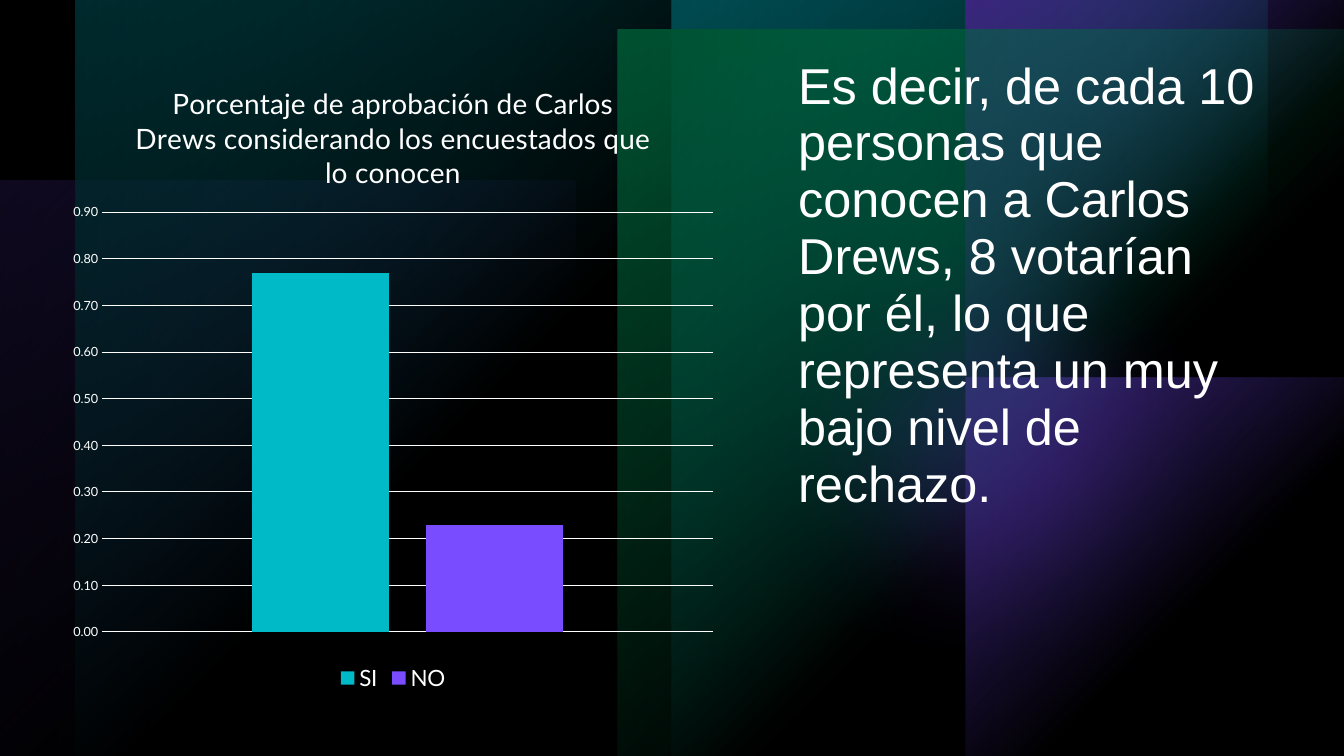
import dataclasses

import pptx
import pptx.chart.data
import pptx.dml.color
import pptx.enum.chart
import pptx.enum.shapes
import pptx.enum.text
import pptx.oxml
import pptx.oxml.ns
import pptx.util
from pptx.util import Cm, Pt


@dataclasses.dataclass(frozen=True)
class Theme:
    black: str = "000000"
    white: str = "FFFFFF"
    purple: str = "794DFF"
    teal: str = "00BAC8"
    green: str = "00D17D"
    text_font: str = "Arial"
    chart_font: str = "Lato"
    statement: int = 36
    chart_title: int = 20
    legend: int = 16
    axis: int = 9


theme = Theme()
rgb = pptx.dml.color.RGBColor.from_string
qn = pptx.oxml.ns.qn
RADIAL = ('<a:path path="circle"><a:fillToRect r="100000" b="100000"/></a:path>'
          '<a:tileRect l="-100000" t="-100000"/>')
LINEAR = '<a:lin ang="0" scaled="0"/>'


def gradient(stops, direction):
    """Gradient fill XML from (position %, colour, opacity %) stops."""
    marks = "".join(
        f'<a:gs pos="{pos * 1000}"><a:srgbClr val="{color}">'
        f'<a:alpha val="{opacity * 1000}"/></a:srgbClr></a:gs>'
        for pos, color, opacity in stops)
    return (f'<a:gradFill {pptx.oxml.ns.nsdecls("a")} rotWithShape="1">'
            f'<a:gsLst>{marks}</a:gsLst>{direction}</a:gradFill>')


def add_layer(page, kind, bounds, fill_xml, rotation=0, flip=False):
    layer = page.shapes.add_shape(kind, *(Cm(value) for value in bounds))
    layer.shadow.inherit = False
    layer.line.fill.background()
    layer.rotation = rotation
    layer.fill.background()
    properties = layer.element.spPr
    properties.replace(properties.find(qn("a:noFill")), pptx.oxml.parse_xml(fill_xml))
    if flip:
        properties.find(qn("a:xfrm")).set("flipH", "1")
    return layer


deck = pptx.Presentation()
deck.slide_width, deck.slide_height = Cm(33.87), Cm(19.05)
page = deck.slides.add_slide(deck.slide_layouts[5])
page.background.fill.solid()
page.background.fill.fore_color.rgb = rgb(theme.black)

# Coloured light behind the content
RECT = pptx.enum.shapes.MSO_SHAPE.RECTANGLE
OVAL = pptx.enum.shapes.MSO_SHAPE.OVAL
corner_glow = gradient([(0, theme.purple, 60), (60, theme.purple, 0)], RADIAL)
add_layer(page, RECT, (0, 4.55, 14.5, 14.5), corner_glow, 270)

for bounds, color, opacity in [
    ((17.73, 0, 11.99, 11.99), theme.green, 96),
    ((16.99, 3.43, 15.29, 15.29), theme.purple, 60),
]:
    fill_xml = (f'<a:solidFill {pptx.oxml.ns.nsdecls("a")}><a:srgbClr val="{color}">'
                f'<a:alpha val="{opacity * 1000}"/></a:srgbClr></a:solidFill>')
    halo = add_layer(page, OVAL, bounds, fill_xml)
    effects = halo.element.spPr.find(qn("a:effectLst"))
    effects.append(pptx.oxml.parse_xml(
        f'<a:softEdge {pptx.oxml.ns.nsdecls("a")} rad="{Pt(100)}"/>'))

for bounds, color, rotation, flip in [
    ((16.92, 0, 15.01, 19.05), theme.teal, 0, False),
    ((1.91, 0, 15.01, 19.05), theme.teal, 0, True),
    ((24.34, 9.52, 9.53, 9.53), theme.purple, 90, False),
    ((24.34, 0, 9.53, 9.53), theme.purple, 90, True),
    ((15.56, 0.74, 18.31, 18.31), theme.green, 180, False),
]:
    glow = gradient([(0, color, 100), (60, color, 0)], RADIAL)
    add_layer(page, RECT, bounds, glow, rotation, flip)

shade = gradient([(0, theme.black, 40), (100, theme.black, 80)], LINEAR)
veil = add_layer(page, RECT, (0, 0, 33.87, 19.05), shade, flip=True)

# Statement
title = page.shapes.title
veil.element.addnext(title.element)
title.left, title.top, title.width, title.height = Cm(19.86), Cm(1.35), Cm(12.5), Cm(11.84)
frame = title.text_frame
frame.text = ("Es decir, de cada 10 personas que conocen a Carlos Drews, 8 votarían "
              "por él, lo que representa un muy bajo nivel de rechazo.")
frame.word_wrap = True
frame.auto_size = pptx.enum.text.MSO_AUTO_SIZE.NONE
frame.vertical_anchor = pptx.enum.text.MSO_ANCHOR.TOP
para = frame.paragraphs[0]
para.alignment = pptx.enum.text.PP_ALIGN.LEFT
para.line_spacing = 0.94
para.font.name = theme.text_font
para.font.size = Pt(theme.statement)
para.font.color.rgb = rgb(theme.white)

# Approval chart
approval = pptx.chart.data.CategoryChartData(number_format="0.00")
approval.categories = ["1"]
approval.add_series("SI", [0.77])
approval.add_series("NO", [0.23])
chart = page.shapes.add_chart(
    pptx.enum.chart.XL_CHART_TYPE.COLUMN_CLUSTERED,
    Cm(1.5), Cm(1.5), Cm(16.81), Cm(16.03), approval).chart
chart.font.name = theme.chart_font
chart.font.size = Pt(10)
chart.font.color.rgb = rgb(theme.white)

chart.has_title = True
heading = chart.chart_title.text_frame
heading.text = ("Porcentaje de aprobación de Carlos Drews considerando "
                "los encuestados que lo conocen")
heading_font = heading.paragraphs[0].font
heading_font.name = theme.chart_font
heading_font.size = Pt(theme.chart_title)
heading_font.bold = False
heading_font.color.rgb = rgb(theme.white)
chart.chart_title.include_in_layout = False

chart.has_legend = True
chart.legend.position = pptx.enum.chart.XL_LEGEND_POSITION.BOTTOM
chart.legend.include_in_layout = False
chart.legend.font.name = theme.chart_font
chart.legend.font.size = Pt(theme.legend)
chart.legend.font.color.rgb = rgb(theme.white)

chart.category_axis.visible = False
axis = chart.value_axis
axis.minimum_scale, axis.maximum_scale, axis.major_unit = 0, 0.9, 0.1
axis.major_tick_mark = pptx.enum.chart.XL_TICK_MARK.NONE
axis.format.line.fill.background()
axis.major_gridlines.format.line.color.rgb = rgb(theme.white)
axis.major_gridlines.format.line.width = Pt(0.75)
axis.tick_labels.number_format = "###0.00"
axis.tick_labels.number_format_is_linked = False
axis.tick_labels.font.name = theme.chart_font
axis.tick_labels.font.size = Pt(theme.axis)
axis.tick_labels.font.color.rgb = rgb(theme.white)

plot = chart.plots[0]
plot.vary_by_categories = False
plot.gap_width = 219
plot.overlap = -27
for series, color in zip(plot.series, (theme.teal, theme.purple)):
    series.format.fill.solid()
    series.format.fill.fore_color.rgb = rgb(color)

# Fixed inner plot area, as fractions of the chart
plot_area = chart.element.find(".//" + qn("c:plotArea"))
for old_layout in plot_area.findall(qn("c:layout")):
    plot_area.remove(old_layout)
places = "".join(f'<c:{tag} val="{value}"/>' for tag, value in [
    ("layoutTarget", "inner"), ("xMode", "edge"), ("yMode", "edge"),
    ("x", 0.064), ("y", 0.24), ("w", 0.916), ("h", 0.66)])
plot_area.insert(0, pptx.oxml.parse_xml(
    f'<c:layout {pptx.oxml.ns.nsdecls("c")}><c:manualLayout>{places}</c:manualLayout></c:layout>'))

deck.save("out.pptx")
